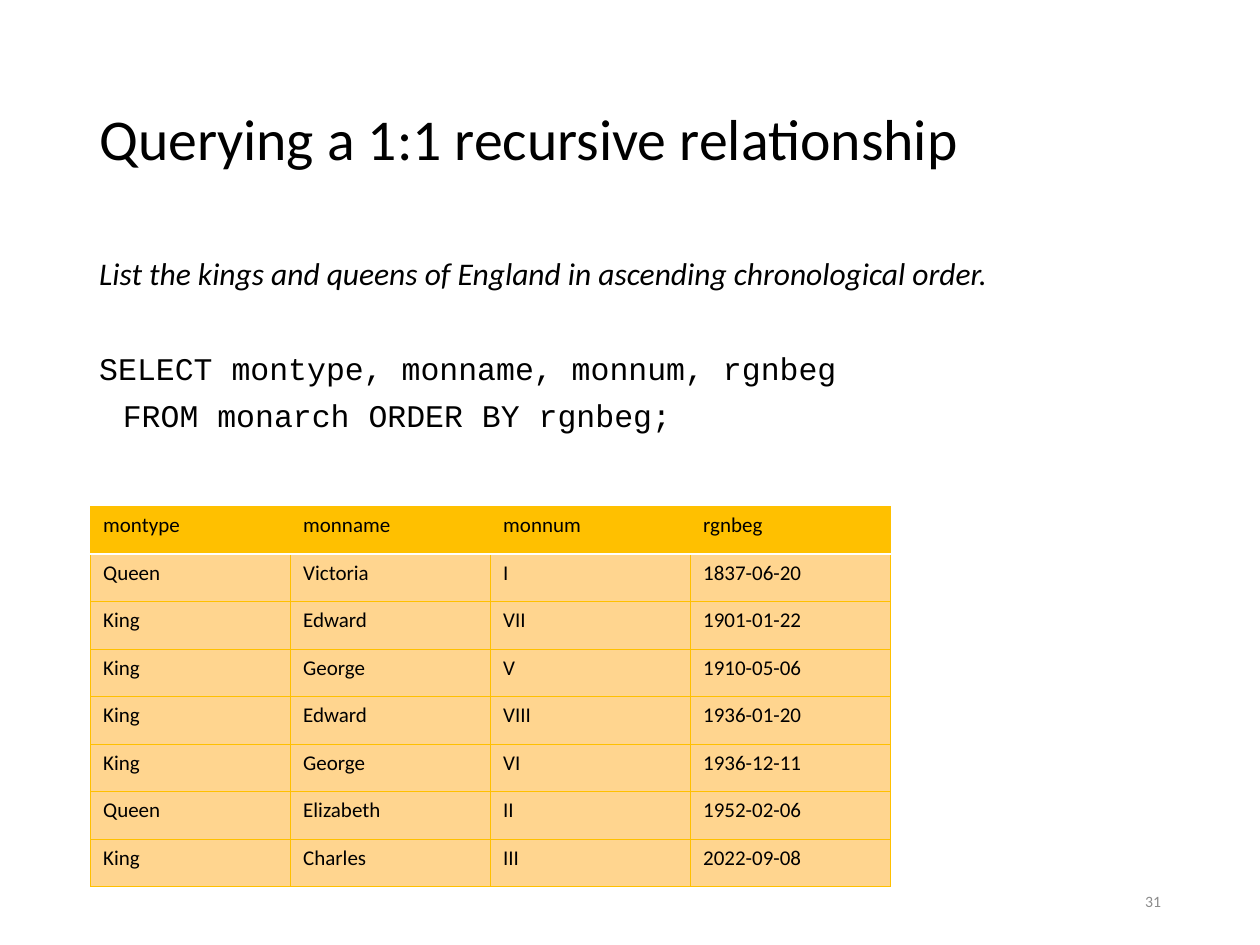
from dataclasses import dataclass

from lxml.etree import SubElement
from pptx import Presentation
from pptx.dml.color import RGBColor as RGB
from pptx.enum.text import MSO_ANCHOR as ANCHOR, MSO_AUTO_SIZE as FIT, PP_ALIGN as ALIGN
from pptx.oxml.ns import qn
from pptx.util import Pt


@dataclass(frozen=True)
class Theme:
    sans: str = "Calibri"
    mono: str = "Courier New"
    ink: str = "000000"
    muted: str = "8C8C8C"
    gold: str = "FFC000"
    pale_gold: str = "FFD58F"
    rule: str = "FFFFFF"
    title_size: int = 33
    body_size: int = 18
    cell_size: int = 12
    number_size: int = 9


class SlideBuilder:
    """Build styled elements on one slide."""

    def __init__(self, slide, theme):
        self.slide = slide
        self.theme = theme

    def apply(self, target, values):
        for name, value in values.items():
            setattr(target, name, value)

    def place(self, holder, box):
        self.apply(holder, dict(zip(("left", "top", "width", "height"), map(Pt, box))))

    def put_text(self, paragraph, text, size, font=None, color=None, italic=False, **layout):
        self.apply(paragraph, layout)
        run = paragraph.add_run()
        run.text = text
        self.apply(run.font, {"name": font or self.theme.sans, "size": Pt(size),
                              "bold": False, "italic": italic})
        run.font.color.rgb = RGB.from_string(color or self.theme.ink)

    def title(self, text, box):
        heading = self.slide.shapes.title
        self.place(heading, box)
        self.apply(heading.text_frame, {"vertical_anchor": ANCHOR.MIDDLE, "auto_size": FIT.NONE})
        self.put_text(heading.text_frame.paragraphs[0], text, self.theme.title_size,
                      alignment=ALIGN.LEFT, line_spacing=0.9)

    def body(self, lines, box):
        holder = self.slide.placeholders[1]
        self.place(holder, box)
        frame = holder.text_frame
        self.apply(frame, {"vertical_anchor": ANCHOR.TOP, "auto_size": FIT.NONE})
        for index, (text, margin, gap, look) in enumerate(lines):
            paragraph = frame.add_paragraph() if index else frame.paragraphs[0]
            self.put_text(paragraph, text, self.theme.body_size, **look,
                          line_spacing=0.9, space_before=Pt(gap))
            properties = paragraph._p.get_or_add_pPr()
            properties.set("marL", str(Pt(margin)))
            properties.set("indent", "0")
            SubElement(properties, qn("a:buNone"))

    def number(self, text, box):
        frame = self.slide.shapes.add_textbox(*map(Pt, box)).text_frame
        self.apply(frame, {"word_wrap": True, "vertical_anchor": ANCHOR.MIDDLE})
        self.put_text(frame.paragraphs[0], text, self.theme.number_size,
                      color=self.theme.muted, alignment=ALIGN.RIGHT)

    def border(self, cell, side, color, width):
        line = SubElement(cell._tc.get_or_add_tcPr(), qn(f"a:ln{side}"), w=str(Pt(width)))
        fill = SubElement(line, qn("a:solidFill"))
        SubElement(fill, qn("a:srgbClr"), val=color)

    def table(self, records, box):
        grid = self.slide.shapes.add_table(len(records), len(records[0]), *map(Pt, box)).table
        grid.horz_banding = False
        edge, rule = (self.theme.gold, 0.5), (self.theme.rule, 1)
        for row, record in enumerate(records):
            for column, text in enumerate(record):
                cell = grid.cell(row, column)
                borders = {"L": edge, "R": edge, "T": rule if row == 1 else edge,
                           "B": rule if row == 0 else edge}
                for side, line in borders.items():
                    self.border(cell, side, *line)
                cell.fill.solid()
                cell.fill.fore_color.rgb = RGB.from_string(
                    self.theme.pale_gold if row else self.theme.gold)
                self.put_text(cell.text_frame.paragraphs[0], text, self.theme.cell_size)


def main():
    deck = Presentation()
    deck.slide_width, deck.slide_height = Pt(720), Pt(540)
    theme = Theme()
    builder = SlideBuilder(deck.slides.add_slide(deck.slide_layouts[1]), theme)
    code = {"font": theme.mono}
    question = "List the kings and queens of England in ascending chronological order."
    query = [
        (question, 0, 7.5, {"italic": True}),
        ("SELECT montype, monname, monnum, rgnbeg", 0, 35, code),
        ("FROM monarch ORDER BY rgnbeg;", 13.5, 7.5, code),
    ]
    monarchs = [
        ("montype", "monname", "monnum", "rgnbeg"),
        ("Queen", "Victoria", "I", "1837-06-20"),
        ("King", "Edward", "VII", "1901-01-22"),
        ("King", "George", "V", "1910-05-06"),
        ("King", "Edward", "VIII", "1936-01-20"),
        ("King", "George", "VI", "1936-12-11"),
        ("Queen", "Elizabeth", "II", "1952-02-06"),
        ("King", "Charles", "III", "2022-09-08"),
    ]
    builder.title("Querying a 1:1 recursive relationship", (49.5, 28.75, 621, 104.4))
    builder.body(query, (49.5, 143.75, 621, 342.6))
    builder.number("31", (508.5, 500.5, 162, 28.75))
    builder.table(monarchs, (51.75, 289.5, 457.2, 217.2))
    deck.save("out.pptx")


if __name__ == "__main__":
    main()
